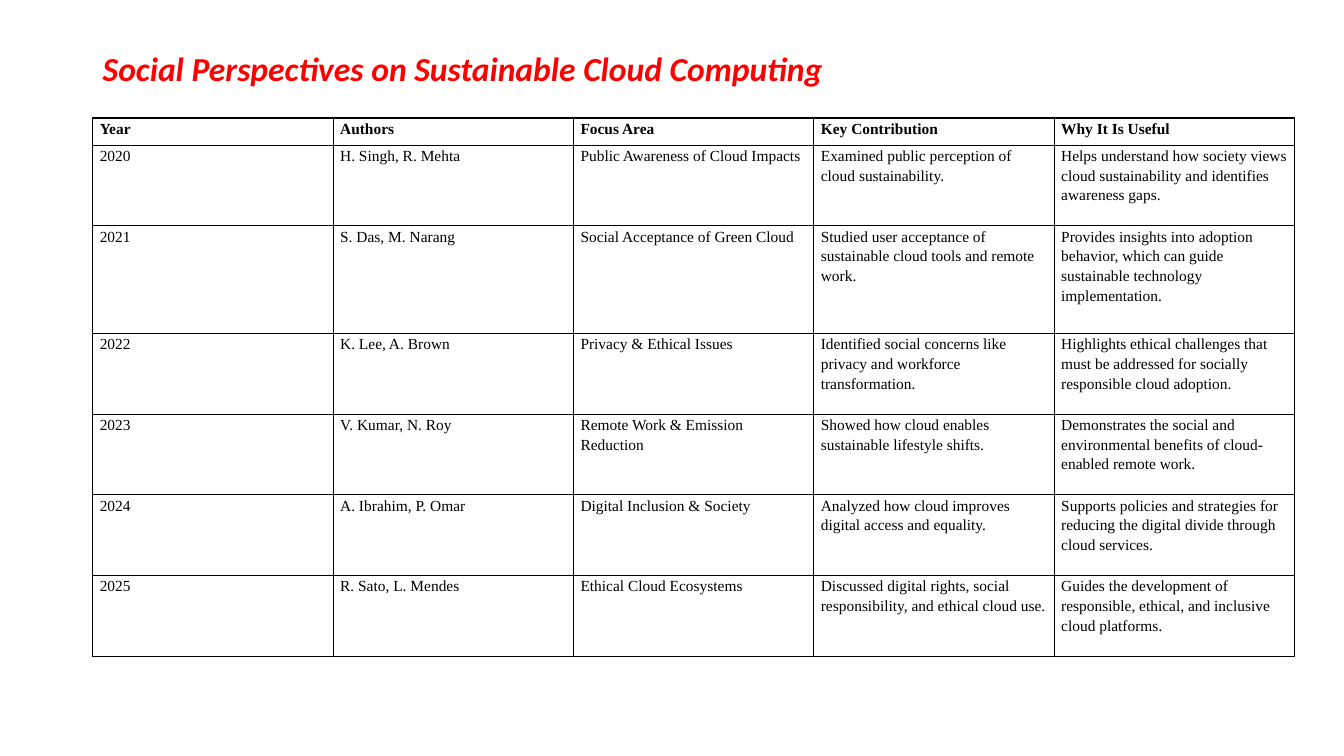
from lxml import etree
from pptx import Presentation
from pptx.dml.color import RGBColor
from pptx.enum.text import MSO_ANCHOR
from pptx.oxml import parse_xml
from pptx.oxml.ns import nsdecls
from pptx.util import Inches, Pt

COLORS = {"title": "FF0000", "text": "000000", "border": "000000"}

HEADINGS = ["Year", "Authors", "Focus Area", "Key Contribution", "Why It Is Useful"]
STUDIES = [
    ["2020", "H. Singh, R. Mehta", "Public Awareness of Cloud Impacts",
     "Examined public perception of cloud sustainability.",
     "Helps understand how society views cloud sustainability and identifies awareness gaps."],
    ["2021", "S. Das, M. Narang", "Social Acceptance of Green Cloud",
     "Studied user acceptance of sustainable cloud tools and remote work.",
     "Provides insights into adoption behavior, which can guide sustainable technology "
     "implementation."],
    ["2022", "K. Lee, A. Brown", "Privacy & Ethical Issues",
     "Identified social concerns like privacy and workforce transformation.",
     "Highlights ethical challenges that must be addressed for socially responsible "
     "cloud adoption."],
    ["2023", "V. Kumar, N. Roy", "Remote Work & Emission Reduction",
     "Showed how cloud enables sustainable lifestyle shifts.",
     "Demonstrates the social and environmental benefits of cloud-enabled remote work."],
    ["2024", "A. Ibrahim, P. Omar", "Digital Inclusion & Society",
     "Analyzed how cloud improves digital access and equality.",
     "Supports policies and strategies for reducing the digital divide through cloud services."],
    ["2025", "R. Sato, L. Mendes", "Ethical Cloud Ecosystems",
     "Discussed digital rights, social responsibility, and ethical cloud use.",
     "Guides the development of responsible, ethical, and inclusive cloud platforms."],
]
ROW_HEIGHTS = [0.27, 0.8, 1.07, 0.8, 0.8, 0.8, 0.8]
TABLE_WIDTH = 11.92


def style_paragraph(para, font_name, size, color, spacing, bold, italic=False):
    para.line_spacing = spacing
    para.font.name = font_name
    para.font.size = Pt(size)
    para.font.bold = bold
    para.font.italic = italic
    para.font.color.rgb = RGBColor.from_string(COLORS[color])


def add_borders(cell):
    properties = cell._tc.get_or_add_tcPr()
    for side in ("lnL", "lnR", "lnT", "lnB"):
        properties.append(parse_xml(
            f'<a:{side} {nsdecls("a")} w="{Pt(1)}"><a:solidFill>'
            f'<a:srgbClr val="{COLORS["border"]}"/></a:solidFill></a:{side}>'))


deck = Presentation()
deck.slide_width = Inches(13.33)
deck.slide_height = Inches(7.5)
page = deck.slides.add_slide(deck.slide_layouts[6])

# Title
title_box = page.shapes.add_textbox(Inches(0.92), Inches(0.4), Inches(11.5), Inches(0.6))
title_frame = title_box.text_frame
title_frame.word_wrap = True
title_frame.vertical_anchor = MSO_ANCHOR.MIDDLE
title_frame.text = "Social Perspectives on Sustainable Cloud Computing"
style_paragraph(title_frame.paragraphs[0], "Calibri", 24, "title", 0.9, bold=True, italic=True)

# Table grid
rows = [HEADINGS] + STUDIES
table = page.shapes.add_table(
    len(rows), len(HEADINGS), Inches(0.92), Inches(1.17),
    Inches(TABLE_WIDTH), Inches(sum(ROW_HEIGHTS))).table
table.first_row = False
table.horz_banding = False
for column in table.columns:
    column.width = Inches(TABLE_WIDTH / len(HEADINGS))
for row, height in zip(table.rows, ROW_HEIGHTS):
    row.height = Inches(height)

# Table cells
for row_index, texts in enumerate(rows):
    for column_index, text in enumerate(texts):
        cell = table.cell(row_index, column_index)
        cell.margin_left = cell.margin_right = Inches(0.07)
        cell.margin_top = cell.margin_bottom = 0
        cell.text = text
        style_paragraph(cell.text_frame.paragraphs[0], "Times New Roman", 11, "text", 1.15,
                        bold=row_index == 0)
        add_borders(cell)
        cell.fill.background()

deck.save("out.pptx")
